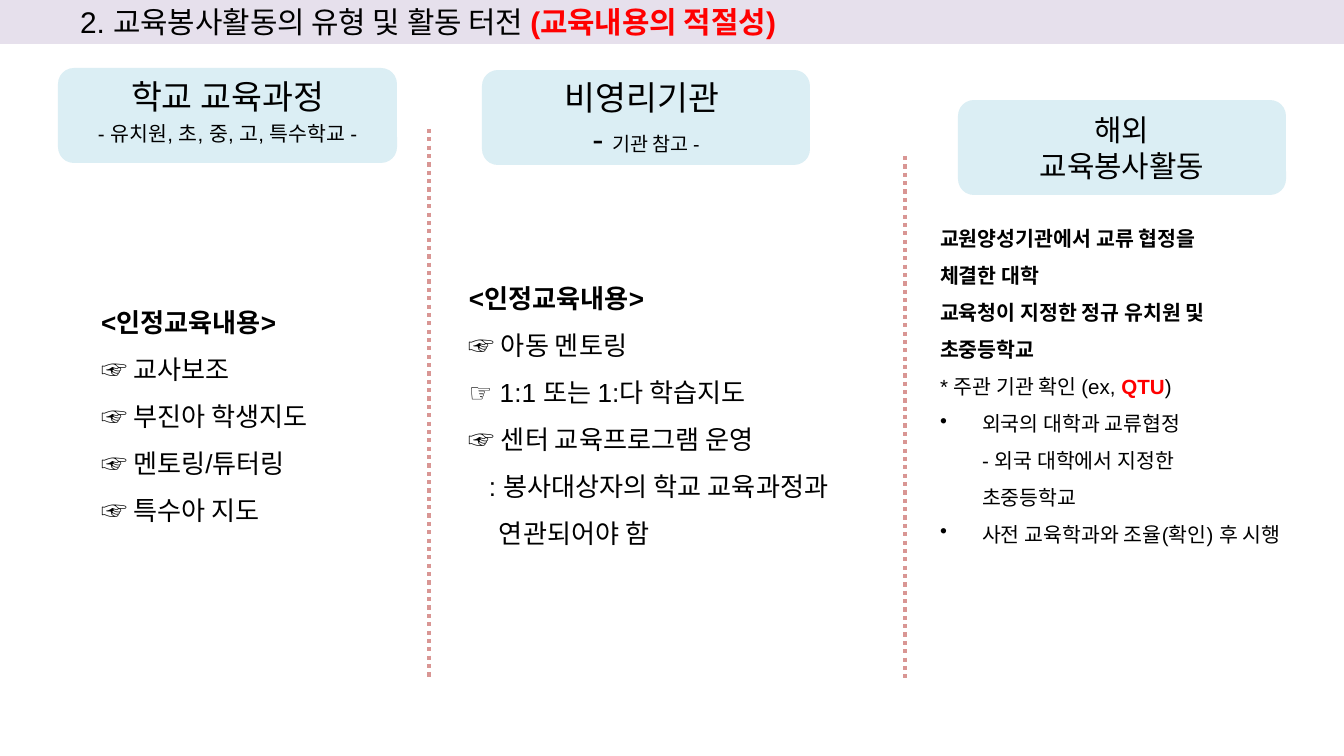
from lxml import etree
from pptx import Presentation
from pptx.dml.color import RGBColor
from pptx.enum.dml import MSO_LINE
from pptx.enum.shapes import MSO_CONNECTOR, MSO_SHAPE
from pptx.enum.text import MSO_ANCHOR, MSO_AUTO_SIZE, PP_ALIGN
from pptx.oxml.ns import qn
from pptx.util import Emu, Pt

BLACK = RGBColor(0x00, 0x00, 0x00)
RED = RGBColor(0xFF, 0x00, 0x00)
LAVENDER = RGBColor(0xE6, 0xE0, 0xEC)
PALE_BLUE = RGBColor(0xDB, 0xEE, 0xF4)
ROSE = RGBColor(0xD9, 0x96, 0x94)
CENTER, LEFT, JUSTIFY = PP_ALIGN.CENTER, PP_ALIGN.LEFT, PP_ALIGN.JUSTIFY
MIDDLE = MSO_ANCHOR.MIDDLE
NO_FIT = MSO_AUTO_SIZE.NONE
DOTTED = MSO_LINE.ROUND_DOT
STRAIGHT = MSO_CONNECTOR.STRAIGHT
ROUNDED = MSO_SHAPE.ROUNDED_RECTANGLE
FONT = "Arial"
EMU_PER_PX = 914400 / 134.4


def px(length):
    return Emu(round(length * EMU_PER_PX))


class SlideBuilder:
    def __init__(self, slide):
        self.slide = slide

    def paragraph(self, paragraph, pieces, size, align=LEFT, spacing=1.0,
                  bold=False, indent=0, bullet=False):
        paragraph.alignment = align
        paragraph.line_spacing = spacing
        font = paragraph.font
        font.name, font.size, font.bold = FONT, Pt(size), bold
        font.color.rgb = BLACK
        properties = paragraph._p.get_or_add_pPr()
        if indent:
            properties.set("marL", str(px(indent)))
            properties.set("indent", str(px(-indent if bullet else 0)))
        if bullet:
            mark = etree.Element(qn("a:buChar"), char="•")
            properties.find(qn("a:defRPr")).addprevious(mark)
        for piece in [pieces] if isinstance(pieces, str) else pieces:
            text, style = (piece, {}) if isinstance(piece, str) else piece
            for number, line in enumerate(text.split("\n")):
                if number:
                    paragraph.add_line_break()
                run = paragraph.add_run()
                run.text = line
                if "size" in style:
                    run.font.size = Pt(style["size"])
                if style.get("accent"):
                    run.font.bold = True
                    run.font.color.rgb = RED

    def fill_text(self, frame, paragraphs, insets=(13, 7, 13, 7), **shared):
        frame.word_wrap = True
        frame.auto_size = NO_FIT
        frame.vertical_anchor = MIDDLE
        (frame.margin_left, frame.margin_top,
         frame.margin_right, frame.margin_bottom) = map(px, insets)
        for number, (pieces, style) in enumerate(paragraphs):
            target = frame.add_paragraph() if number else frame.paragraphs[0]
            self.paragraph(target, pieces, **{**shared, **style})

    def title(self, box, pieces):
        title = self.slide.shapes.title
        title.left, title.top, title.width, title.height = map(px, box)
        title.fill.solid()
        title.fill.fore_color.rgb = LAVENDER
        self.fill_text(title.text_frame, [(pieces, {})],
                       size=16, align=JUSTIFY, indent=67)

    def divider(self, x, top, bottom):
        line = self.slide.shapes.add_connector(
            STRAIGHT, px(x), px(top), px(x), px(bottom))
        line.line.color.rgb = ROSE
        line.line.width = Pt(2.25)
        line.line.dash_style = DOTTED
        etree.SubElement(line._element.spPr, qn("a:effectLst"))

    def header(self, box, paragraphs, **shared):
        card = self.slide.shapes.add_shape(ROUNDED, *map(px, box))
        card.shadow.inherit = False
        card.fill.solid()
        card.fill.fore_color.rgb = PALE_BLUE
        card.line.fill.background()
        self.fill_text(card.text_frame, paragraphs, align=CENTER, **shared)

    def body(self, box, paragraphs, **shared):
        frame = self.slide.shapes.add_textbox(*map(px, box)).text_frame
        self.fill_text(frame, paragraphs, spacing=1.5, **shared)


def main():
    deck = Presentation()
    deck.slide_width, deck.slide_height = px(1344), px(756)
    page = SlideBuilder(deck.slides.add_slide(deck.slide_layouts[5]))
    bold = {"bold": True}
    bulleted = {"indent": 42, "bullet": True}

    page.title((0, 0, 1344, 44), [
        "2. 교육봉사활동의 유형 및 활동 터전",
        (" (교육내용의 적절성)", {"accent": True}),
    ])
    for x, top in ((429, 129), (905, 156)):
        page.divider(x, top, 680)

    page.header((58, 68, 339, 95), [
        ("학교 교육과정", {}),
        ("- 유치원, 초, 중, 고, 특수학교 -", {"size": 11}),
    ], size=18, spacing=1.2, insets=(0, 0, 0, 17))
    page.header((482, 70, 328, 95), [
        ("비영리기관 ", {}),
        (["- ", ("기관 참고 -", {"size": 10.5})], {}),
    ], size=18)
    page.header((958, 100, 328, 95), [
        ("해외", {}),
        ("교육봉사활동", {}),
    ], size=16)

    page.body((456, 258, 427, 300), [
        ("<인정교육내용>", bold),
        ("☞ 아동 멘토링", {}),
        ("☞ 1:1 또는 1:다 학습지도", {}),
        ("☞ 센터 교육프로그램 운영", {}),
        (": 봉사대상자의 학교 교육과정과", {"indent": 20}),
        ("연관되어야 함", {"indent": 30}),
    ], size=14)
    page.body((88, 219, 324, 378), [
        ("<인정교육내용>", bold),
        ("☞ 교사보조", {}),
        ("☞ 부진아 학생지도", {}),
        ("☞ 멘토링/튜터링", {}),
        ("☞ 특수아 지도", {}),
    ], size=14)
    page.body((927, 192, 440, 450), [
        ("교원양성기관에서 교류 협정을\n체결한 대학\n교육청이 지정한 정규 유치원 및", bold),
        ("초중등학교", bold),
        (["* 주관 기관 확인 (ex, ", ("QTU", {"accent": True}), ")"], {}),
        ("외국의 대학과 교류협정\n- 외국 대학에서 지정한\n초중등학교", bulleted),
        ("사전 교육학과와 조율(확인) 후 시행", bulleted),
    ], size=11, insets=(13, 7, 13, 81))

    deck.save("out.pptx")


if __name__ == "__main__":
    main()
